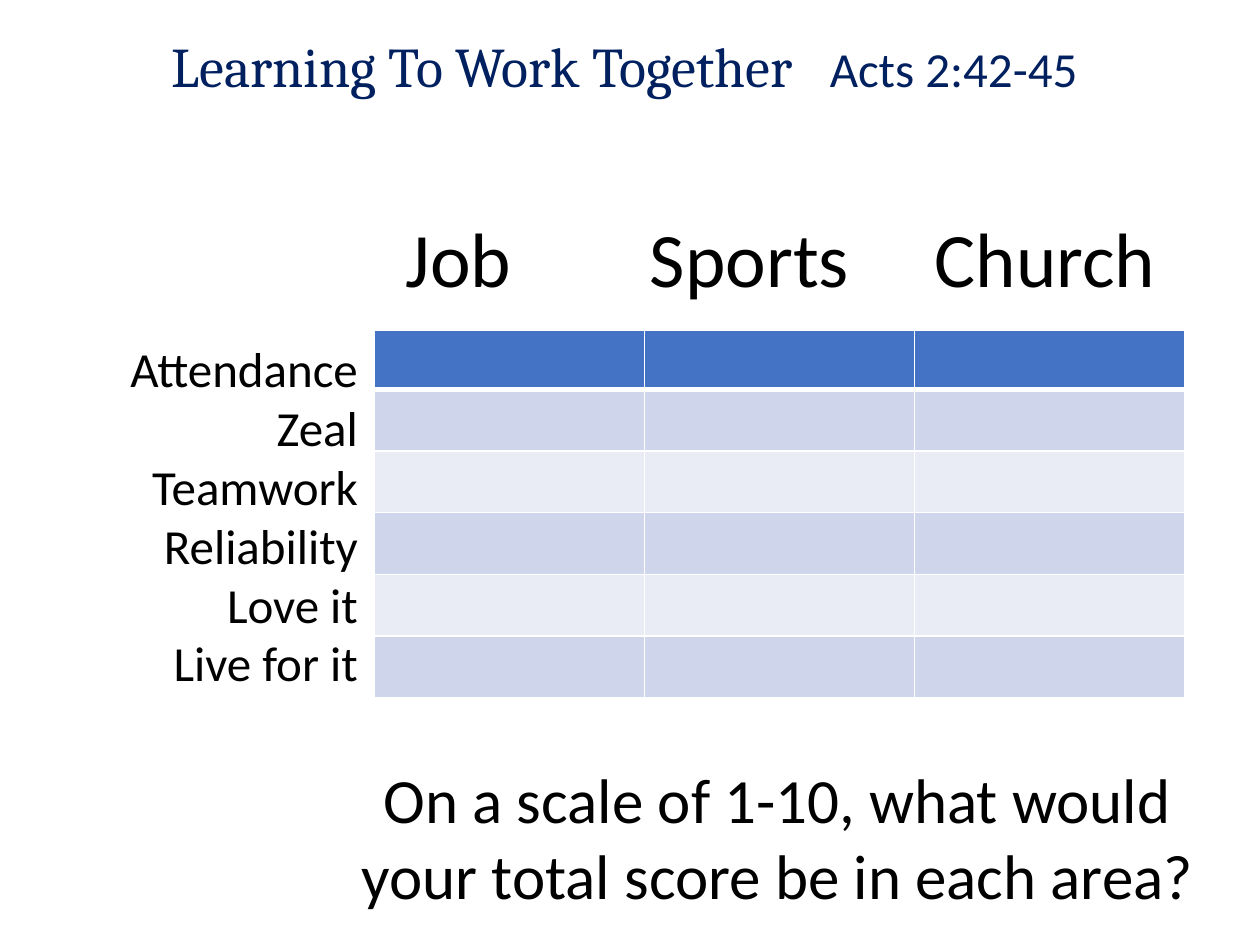
from dataclasses import dataclass

from lxml import etree
from pptx import Presentation
from pptx.dml.color import RGBColor
from pptx.enum.text import MSO_AUTO_SIZE, PP_ALIGN
from pptx.oxml.ns import qn
from pptx.util import Inches, Pt

LEFT, CENTER, RIGHT = PP_ALIGN.LEFT, PP_ALIGN.CENTER, PP_ALIGN.RIGHT
FIT_SHAPE = MSO_AUTO_SIZE.SHAPE_TO_FIT_TEXT


@dataclass(frozen=True)
class Theme:
    heading_font: str = "Cambria"
    body_font: str = "Calibri"
    navy: str = "002060"
    black: str = "000000"
    white: str = "FFFFFF"
    header_fill: str = "4472C4"
    bands: tuple = ("CFD5EA", "E9EBF5")
    title_size: int = 32
    text_size: int = 28
    column_size: int = 44
    question_size: int = 36


class SlideBuilder:
    def __init__(self, page, theme):
        self.page = page
        self.theme = theme

    def style(self, font, name, size, color):
        font.name = name
        font.size = Pt(size)
        font.color.rgb = RGBColor.from_string(color)

    def frame(self, left, top, width, height):
        box = self.page.shapes.add_textbox(
            Inches(left), Inches(top), Inches(width), Inches(height))
        frame = box.text_frame
        frame.word_wrap = True
        frame.auto_size = FIT_SHAPE
        return frame

    def title(self, place, heading, reference, gap):
        theme = self.theme
        para = self.frame(*place).paragraphs[0]
        para.alignment = CENTER
        parts = (
            (heading, theme.heading_font, theme.title_size),
            (" ", theme.heading_font, theme.title_size),
            (reference, theme.body_font, theme.text_size),
        )
        for text, name, size in parts:
            span = para.add_run()
            span.text = text
            self.style(span.font, name, size, theme.navy)
        # Widen the single space between heading and reference
        para.runs[1].font._element.set("spc", str(gap * 100))

    def text(self, place, lines, size, align=LEFT, right_inset=0.1, tabs=()):
        frame = self.frame(*place)
        frame.margin_right = Inches(right_inset)
        frame.text = "\n".join(lines)
        for para in frame.paragraphs:
            para.alignment = align
            self.style(para.font, self.theme.body_font, size, self.theme.black)
            if tabs:
                properties = para._p.get_or_add_pPr()
                stops = etree.Element(qn("a:tabLst"))
                for position in tabs:
                    etree.SubElement(stops, qn("a:tab"),
                                     pos=str(Inches(position)), algn="l")
                properties.insert(0, stops)

    def border(self, cell, side, width):
        line = etree.SubElement(cell._tc.get_or_add_tcPr(), qn(f"a:ln{side}"),
                                w=str(Pt(width)))
        fill = etree.SubElement(line, qn("a:solidFill"))
        etree.SubElement(fill, qn("a:srgbClr"), val=self.theme.white)

    def score_table(self, place, columns, row_heights):
        left, top, width, height = map(Inches, place)
        table = self.page.shapes.add_table(
            len(row_heights), columns, left, top, width, height).table
        for column in table.columns:
            column.width = width // columns
        for index, row in enumerate(table.rows):
            row.height = Inches(row_heights[index])
            color = (self.theme.bands[(index - 1) % 2] if index
                     else self.theme.header_fill)
            # A thick rule separates the header from the first band
            widths = {"L": 1, "R": 1, "T": 3 if index == 1 else 1,
                      "B": 3 if index == 0 else 1}
            for cell in row.cells:
                for side, line_width in widths.items():
                    self.border(cell, side, line_width)
                cell.fill.solid()
                cell.fill.fore_color.rgb = RGBColor.from_string(color)


deck = Presentation()
deck.slide_width, deck.slide_height = Inches(10), Inches(7.5)
theme = Theme()
slide = SlideBuilder(deck.slides.add_slide(deck.slide_layouts[6]), theme)

# Title
slide.title((0, 0.2, 10, 0.64), "Learning To Work Together", "Acts 2:42-45 ",
            gap=14)

# Column headings
slide.text((3.12, 1.62, 7.58, 0.84), ["Job\tSports\tChurch"],
           theme.column_size, tabs=(1.94, 4.2))

# Score grid with its row labels
slide.score_table((2.97, 2.62, 6.43, 2.93), 3, [0.47] + [0.49] * 5)
labels = ["Attendance", "Zeal", "Teamwork", "Reliability", "Love it",
          "Live for it"]
slide.text((0.43, 2.64, 2.55, 3.4), labels, theme.text_size, RIGHT,
           right_inset=0.14)

# Closing question
slide.text((2.6, 5.99, 7.14, 1.31),
           ["On a scale of 1-10, what would your total score be in each area?"],
           theme.question_size, CENTER)

deck.save("out.pptx")
